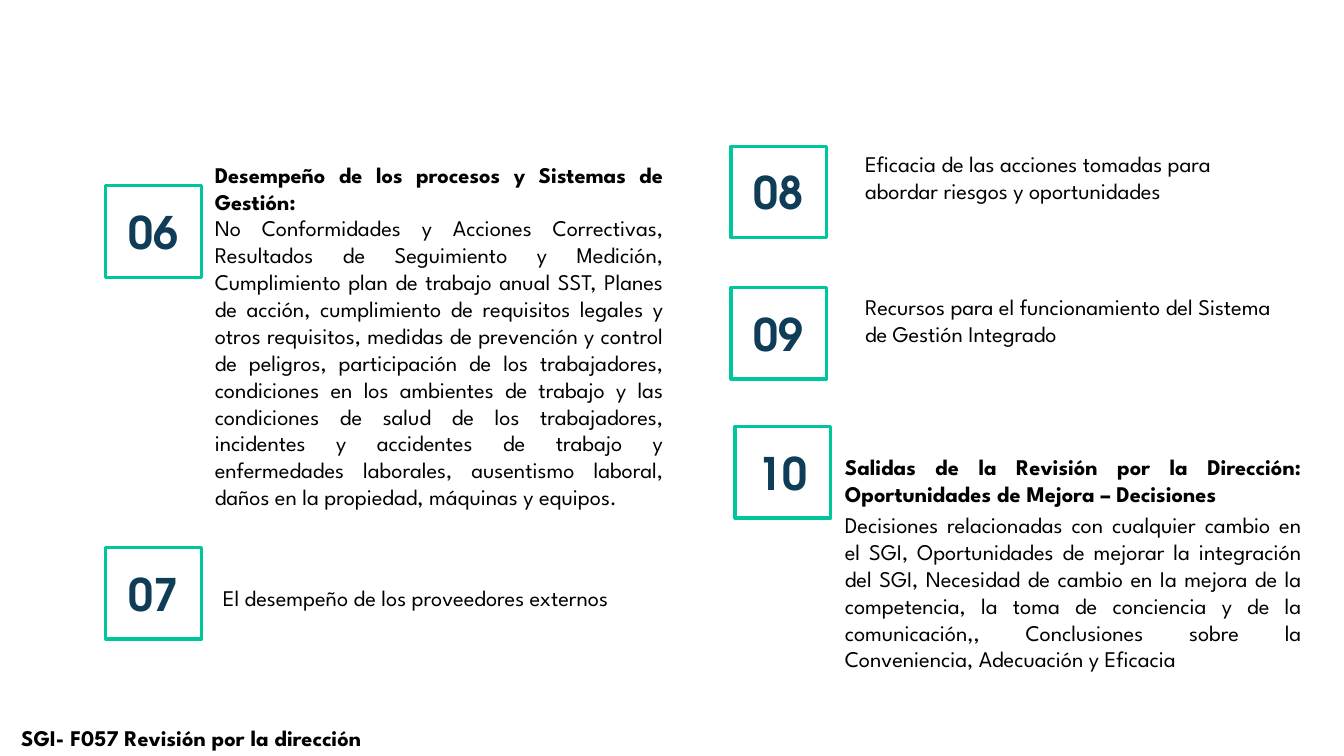
from pptx import Presentation
from pptx.dml.color import RGBColor
from pptx.enum import shapes, text
from pptx.util import Inches, Pt

GREEN, NAVY, BLACK = "00C69B", "0F3D57", "000000"
BODY_FONT, NUMBER_FONT = "League Spartan", "TeX Gyre Adventor"
LEFT, JUSTIFY = text.PP_ALIGN.LEFT, text.PP_ALIGN.JUSTIFY
BADGE_SIZE = 0.95, 0.91

RESULTS = [
    ("Desempeño de los procesos y Sistemas de Gestión:", True),
    ("No Conformidades y Acciones Correctivas, Resultados de Seguimiento y Medición, "
     "Cumplimiento plan de trabajo anual SST, Planes de acción, cumplimiento de requisitos "
     "legales y otros requisitos, medidas de prevención y control de peligros, participación "
     "de los trabajadores, condiciones en los ambientes de trabajo y las condiciones de salud "
     "de los trabajadores, incidentes y accidentes de trabajo y enfermedades laborales, "
     "ausentismo laboral, daños en la propiedad, máquinas y equipos.", False),
]
SUPPLIERS = [("El desempeño de los proveedores externos", False)]
RISKS = [("Eficacia de las acciones tomadas para abordar riesgos y oportunidades", False)]
RESOURCES = [("Recursos para el funcionamiento del Sistema de Gestión Integrado", False)]
OUTPUTS = [
    ("Salidas de la Revisión por la Dirección: Oportunidades de Mejora – Decisiones", True),
    ("Decisiones relacionadas con cualquier cambio en el SGI, Oportunidades de mejorar la "
     "integración del SGI, Necesidad de cambio en Ia mejora de la competencia, la toma de "
     "conciencia y de la comunicación,, Conclusiones sobre la Conveniencia, Adecuación y "
     "Eficacia", False),
]

TOPICS = [
    ("06", (1.05, 1.84), (2.08, 0.97, 4.55, 4.14), RESULTS, JUSTIFY, 0),
    ("07", (1.05, 5.43), (2.16, 5.47, 4.09, 0.64), SUPPLIERS, LEFT, 0),
    ("08", (7.25, 1.45), (8.53, 1.43, 4.24, 0.64), RISKS, LEFT, 0),
    ("09", (7.25, 2.85), (8.53, 2.85, 4.24, 0.64), RESOURCES, LEFT, 0),
    ("10", (7.29, 4.23), (8.33, 4.14, 4.63, 2.58), OUTPUTS, JUSTIFY, 3.2),
]


def color(value):
    """Turn a hex string into a colour."""
    return RGBColor.from_string(value)


def add_run(paragraph, words, font_name, size, hue, bold):
    """Append one formatted run to a paragraph."""
    run = paragraph.add_run()
    run.text = words
    run.font.name = font_name
    run.font.size = Pt(size)
    run.font.bold = bold
    run.font.color.rgb = color(hue)


def add_badge(slide, box, number):
    """Draw an outlined badge with its number centred in the box."""
    badge = slide.shapes.add_shape(shapes.MSO_SHAPE.RECTANGLE, *map(Inches, box))
    badge.shadow.inherit = False
    badge.fill.background()
    badge.line.color.rgb = color(GREEN)
    badge.line.width = Pt(2.25)
    frame = badge.text_frame
    frame.vertical_anchor = text.MSO_ANCHOR.MIDDLE
    frame.paragraphs[0].alignment = text.PP_ALIGN.CENTER
    add_run(frame.paragraphs[0], number, NUMBER_FONT, 32, NAVY, True)


def add_passage(slide, box, passage, alignment=LEFT, gap=0):
    """Set paragraphs at the bottom of the box, with a gap between them."""
    frame = slide.shapes.add_textbox(*map(Inches, box)).text_frame
    frame.word_wrap = True
    frame.vertical_anchor = text.MSO_ANCHOR.BOTTOM
    frame.margin_left = frame.margin_right = Inches(0.05)
    frame.margin_top = frame.margin_bottom = Inches(0.05)
    for index, (words, bold) in enumerate(passage):
        paragraph = frame.add_paragraph() if index else frame.paragraphs[0]
        paragraph.alignment = alignment
        if index:
            paragraph.space_before = Pt(gap)
        add_run(paragraph, words, BODY_FONT, 16, BLACK, bold)


def add_agenda(slide):
    """Place the numbered review topics and the form code."""
    for number, corner, passage_box, passage, alignment, gap in TOPICS:
        add_badge(slide, corner + BADGE_SIZE, number)
        add_passage(slide, passage_box, passage, alignment, gap)
    add_passage(slide, (0.16, 7.13, 4.8, 0.37),
                [("SGI- F057 Revisión por la dirección", True)])


def main():
    """Build the deck and save it."""
    deck = Presentation()
    deck.slide_width, deck.slide_height = Inches(13.33), Inches(7.5)
    add_agenda(deck.slides.add_slide(deck.slide_layouts[6]))
    deck.save("out.pptx")


if __name__ == "__main__":
    main()
